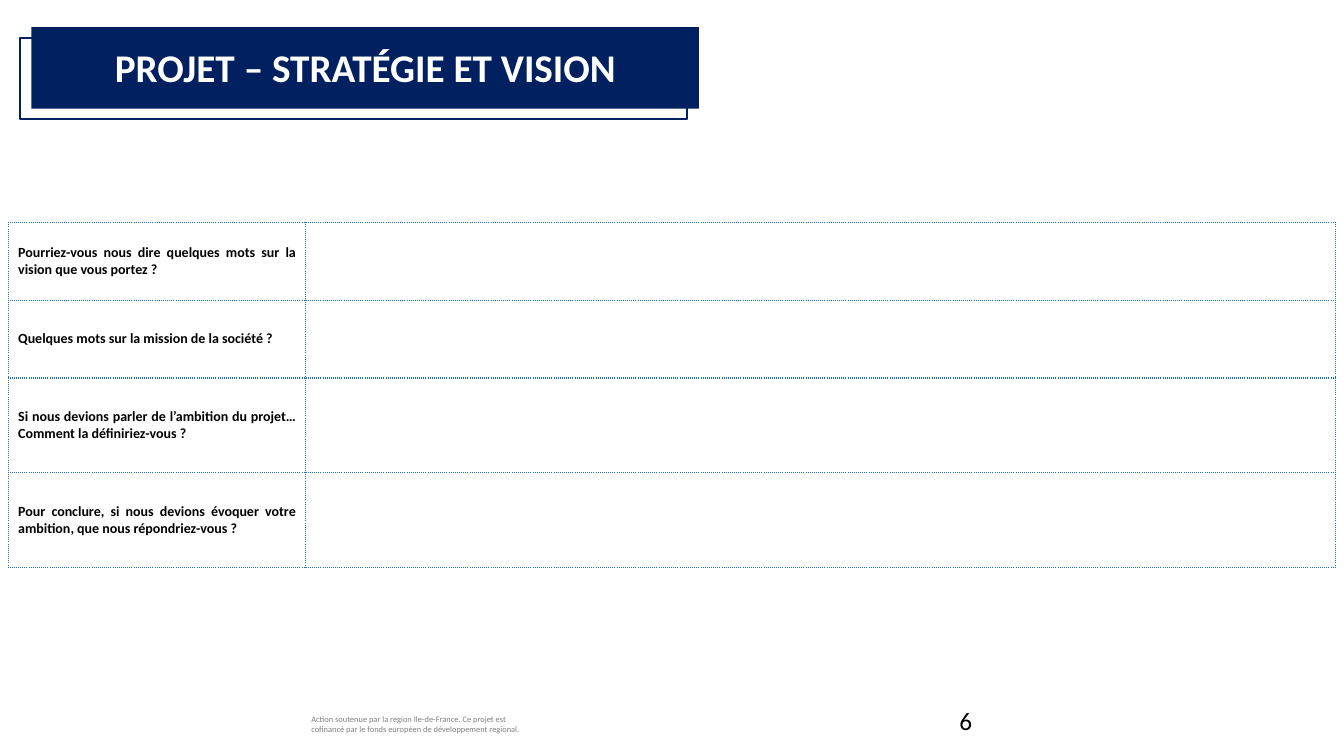
from lxml import etree
from pptx import Presentation
from pptx.dml.color import RGBColor
from pptx.enum import shapes, text
from pptx.oxml import ns
from pptx.util import Pt

# Content
TITLE = "PROJET – STRATÉGIE ET VISION"
QUESTIONS = [
    # question, row height
    ("Pourriez-vous nous dire quelques mots sur la vision que vous portez ?", 55.4),
    ("Quelques mots sur la mission de la société ?", 55.4),
    ("Si nous devions parler de l’ambition du projet… Comment la définiriez-vous ?", 67.6),
    ("Pour conclure, si nous devions évoquer votre ambition, que nous répondriez-vous ?", 67.6),
]
FUNDING = ("Action soutenue par la region Ile-de-France. Ce projet est "
           "cofinancé par le fonds européen de développement regional.")
PAGE = "6"

# Style and layout, in points
COLORS = {"navy": "002060", "border": "2070B8", "black": "000000",
          "gray": "808080", "white": "FFFFFF"}
BANNER = (22.5, 19.4, 476.8, 58.3)
BANNER_SHIFT = (-8.2, 7.5)
TITLE_BOX = (22.5, 27.4, 476.8, 41)
TABLE_ORIGIN = (5.8, 159.2)
COLUMNS = (212.6, 735.4)
FUNDING_BOX = (215.3, 506.2, 171.4, 21.6)
PAGE_BOX = (678.2, 500.4, 216, 28.8)


def color(name):
    return RGBColor.from_string(COLORS[name])


def write(frame, words, size, color_name, bold=False, align=text.PP_ALIGN.LEFT):
    frame.text = words
    paragraph = frame.paragraphs[0]
    paragraph.alignment = align
    font_format = {"name": "Calibri", "size": Pt(size), "bold": bold}
    for key, value in font_format.items():
        setattr(paragraph.runs[0].font, key, value)
    paragraph.runs[0].font.color.rgb = color(color_name)


def add_label(box, words, size, color_name):
    frame = slide.shapes.add_textbox(*map(Pt, box)).text_frame
    frame.word_wrap = True
    write(frame, words, size, color_name)


def add_rectangle(box):
    shape = slide.shapes.add_shape(shapes.MSO_SHAPE.RECTANGLE, *map(Pt, box))
    shape.shadow.inherit = False
    return shape


def add_borders(cell):
    properties = cell._tc.get_or_add_tcPr()
    for side in ("lnL", "lnR", "lnT", "lnB"):
        line = etree.SubElement(properties, ns.qn("a:" + side), w=str(Pt(1)))
        fill = etree.SubElement(line, ns.qn("a:solidFill"))
        etree.SubElement(fill, ns.qn("a:srgbClr"), val=COLORS["border"])
        etree.SubElement(line, ns.qn("a:prstDash"), val="sysDot")


presentation = Presentation()
presentation.slide_width, presentation.slide_height = Pt(960), Pt(540)
slide = presentation.slides.add_slide(presentation.slide_layouts[5])

# Funding note
add_label(FUNDING_BOX, FUNDING, 6, "gray")

# Question table
table = slide.shapes.add_table(
    len(QUESTIONS), len(COLUMNS), *map(Pt, TABLE_ORIGIN),
    Pt(sum(COLUMNS)), Pt(sum(height for _, height in QUESTIONS))).table
table.first_row = table.horz_banding = False
for column, width in zip(table.columns, COLUMNS):
    column.width = Pt(width)
for row, (question, height) in zip(table.rows, QUESTIONS):
    row.height = Pt(height)
    for cell in row.cells:
        add_borders(cell)
        cell.fill.background()
        cell.vertical_anchor = text.MSO_ANCHOR.MIDDLE
    write(row.cells[0].text_frame, question, 10, "black", True, text.PP_ALIGN.JUSTIFY)

# Title banner: shifted outline behind a solid bar
left, top, width, height = BANNER
outline = add_rectangle((left + BANNER_SHIFT[0], top + BANNER_SHIFT[1], width, height))
outline.fill.background()
outline.line.color.rgb = color("navy")
outline.line.width = Pt(1.5)
bar = add_rectangle(BANNER)
bar.fill.solid()
bar.fill.fore_color.rgb = color("navy")
bar.line.fill.background()

# Title, brought in front of the banner
title = slide.shapes.title
for key, value in zip(("left", "top", "width", "height"), TITLE_BOX):
    setattr(title, key, Pt(value))
title.text_frame.vertical_anchor = text.MSO_ANCHOR.MIDDLE
write(title.text_frame, TITLE, 28, "white", True, text.PP_ALIGN.CENTER)
slide.shapes.element.append(title.element)

# Page number
add_label(PAGE_BOX, PAGE, 18, "black")

presentation.save("out.pptx")
